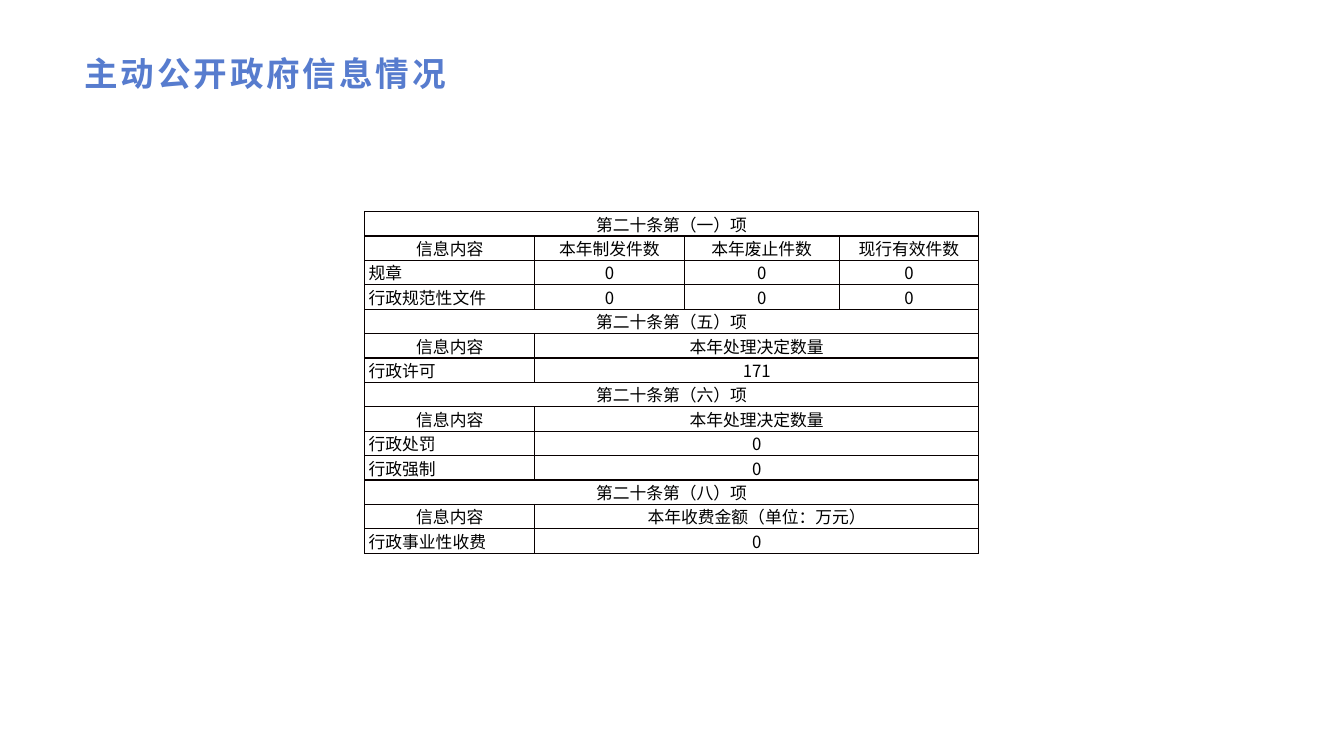
from dataclasses import dataclass

from lxml import etree
from pptx import Presentation
from pptx.dml.color import RGBColor
from pptx.enum.text import MSO_ANCHOR, MSO_AUTO_SIZE, PP_ALIGN
from pptx.oxml.ns import qn
from pptx.util import Cm, Pt

LEFT, CENTER = PP_ALIGN.LEFT, PP_ALIGN.CENTER
MIDDLE = MSO_ANCHOR.MIDDLE
NO_AUTOFIT = MSO_AUTO_SIZE.NONE
TITLE_ONLY = 5


@dataclass(frozen=True)
class Theme:
    title_color: str = "577CCE"
    text_color: str = "000000"
    border_color: str = "080000"
    cell_color: str = "FFFFFF"
    title_size: int = 24
    cell_size: int = 12
    border_width: int = 1
    title_spacing: int = 2
    latin_title: str = "Arial"
    chinese: str = "Noto Sans CJK SC"


THEME = Theme()

COLUMN_WIDTHS = (4.29, 3.76, 3.91, 3.51)
ROW_HEIGHT = 0.6
HEADING = "信息内容"
SECTIONS = (
    ("第二十条第（一）项", ("本年制发件数", "本年废止件数", "现行有效件数"),
     (("规章", "0", "0", "0"), ("行政规范性文件", "0", "0", "0"))),
    ("第二十条第（五）项", ("本年处理决定数量",),
     (("行政许可", "171"),)),
    ("第二十条第（六）项", ("本年处理决定数量",),
     (("行政处罚", "0"), ("行政强制", "0"))),
    ("第二十条第（八）项", ("本年收费金额（单位：万元）",),
     (("行政事业性收费", "0"),)),
)


def set_margins(box, left, top, right, bottom):
    box.margin_left, box.margin_top = Cm(left), Cm(top)
    box.margin_right, box.margin_bottom = Cm(right), Cm(bottom)


def style_span(span, latin, size, color, bold=False):
    span.font.name = latin
    span.font.size = Pt(size)
    span.font.bold = bold
    span.font.color.rgb = RGBColor.from_string(color)
    east_asian = etree.Element(qn("a:ea"), typeface=THEME.chinese)
    span.font._element.find(qn("a:latin")).addnext(east_asian)


def add_title(page, text):
    title = page.shapes.title
    title.left, title.top = Cm(1.85), Cm(1.22)
    title.width, title.height = Cm(30.15), Cm(1.22)
    frame = title.text_frame
    frame.text = text
    frame.word_wrap = True
    frame.auto_size = NO_AUTOFIT
    frame.vertical_anchor = MIDDLE
    set_margins(frame, 0.28, 0.1, 0.2, 0.1)
    para = frame.paragraphs[0]
    para.alignment = LEFT
    span = para.runs[0]
    style_span(span, THEME.latin_title, THEME.title_size, THEME.title_color, True)
    span.font._element.set("spc", str(THEME.title_spacing * 100))


def add_borders(cell):
    properties = cell._tc.get_or_add_tcPr()
    for side in ("a:lnL", "a:lnR", "a:lnT", "a:lnB"):
        line = etree.SubElement(properties, qn(side), w=str(Pt(THEME.border_width)))
        fill = etree.SubElement(line, qn("a:solidFill"))
        etree.SubElement(fill, qn("a:srgbClr"), val=THEME.border_color)


def style_cell(cell):
    add_borders(cell)
    cell.fill.solid()
    cell.fill.fore_color.rgb = RGBColor.from_string(THEME.cell_color)
    cell.vertical_anchor = MIDDLE
    set_margins(cell, 0.1, 0, 0.1, 0)


def write_cell(cell, text, alignment):
    cell.text_frame.text = text
    para = cell.text_frame.paragraphs[0]
    para.alignment = alignment
    style_span(para.runs[0], THEME.chinese, THEME.cell_size, THEME.text_color)


def table_rows():
    for name, headings, records in SECTIONS:
        yield (name,), CENTER
        yield (HEADING, *headings), CENTER
        for record in records:
            yield record, LEFT


def add_disclosure_table(page):
    rows = list(table_rows())
    last = len(COLUMN_WIDTHS) - 1
    frame = page.shapes.add_table(
        len(rows), len(COLUMN_WIDTHS), Cm(9.19), Cm(5.33),
        Cm(sum(COLUMN_WIDTHS)), Cm(ROW_HEIGHT * len(rows)))
    table = frame.table
    table.first_row = table.horz_banding = False
    for column, width in zip(table.columns, COLUMN_WIDTHS):
        column.width = Cm(width)
    for cell in table.iter_cells():
        style_cell(cell)
    for index, (texts, first_alignment) in enumerate(rows):
        table.rows[index].height = Cm(ROW_HEIGHT)
        if len(texts) <= last:
            table.cell(index, len(texts) - 1).merge(table.cell(index, last))
        for column, text in enumerate(texts):
            alignment = CENTER if column else first_alignment
            write_cell(table.cell(index, column), text, alignment)


def main():
    deck = Presentation()
    deck.slide_width, deck.slide_height = Cm(33.87), Cm(19.05)
    page = deck.slides.add_slide(deck.slide_layouts[TITLE_ONLY])
    add_title(page, "主动公开政府信息情况")
    add_disclosure_table(page)
    deck.save("out.pptx")


if __name__ == "__main__":
    main()
